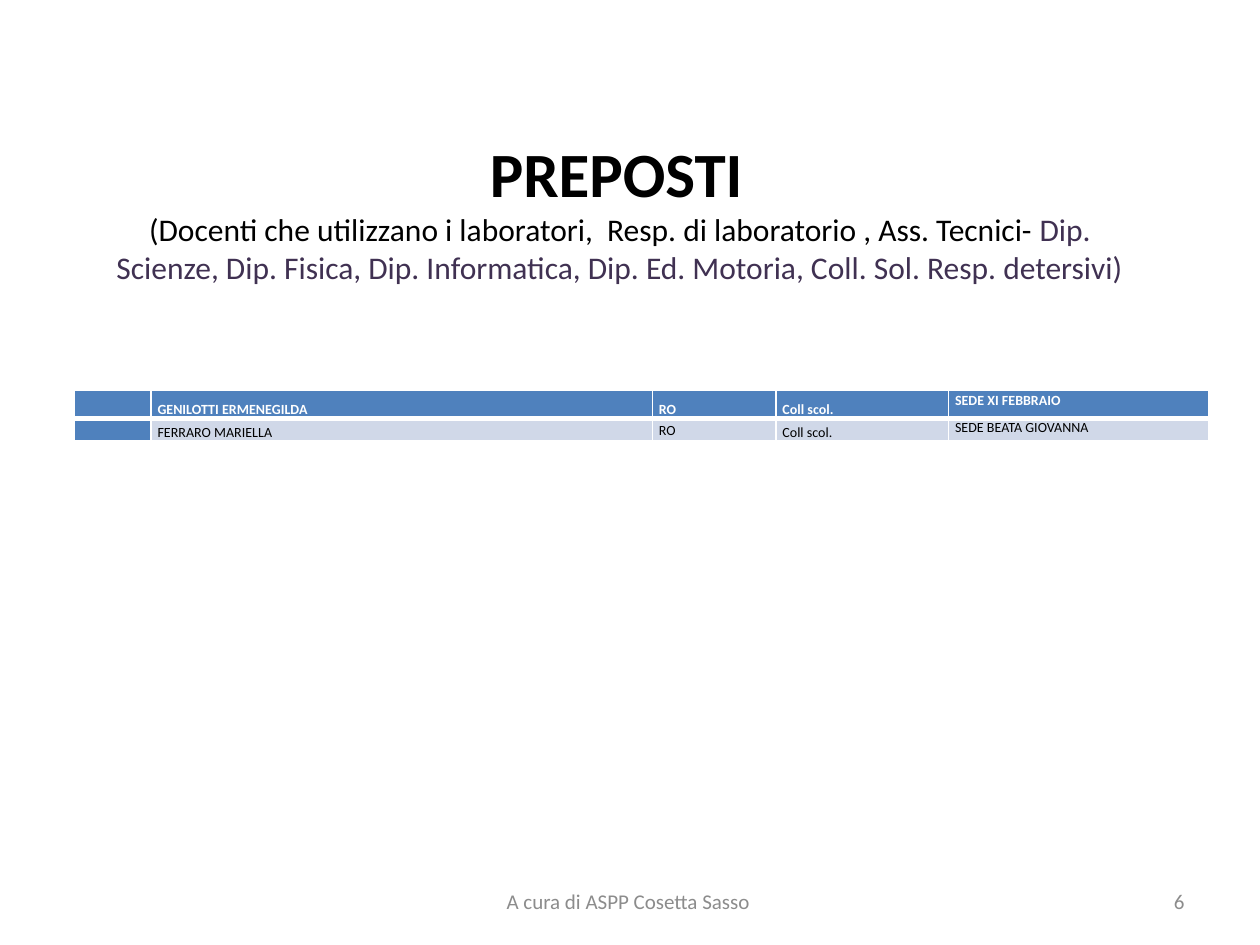
from dataclasses import dataclass

import lxml.etree
import pptx
import pptx.dml.color
import pptx.enum.text
import pptx.oxml.ns
import pptx.util

Inches = pptx.util.Inches
Pt = pptx.util.Pt
Align = pptx.enum.text.PP_ALIGN
Anchor = pptx.enum.text.MSO_ANCHOR
qn = pptx.oxml.ns.qn


@dataclass(frozen=True)
class Theme:
    font: str = "Calibri"
    ink: str = "000000"
    violet: str = "403152"
    grey: str = "8C8C8C"
    white: str = "FFFFFF"
    header: str = "4F81BD"
    band: str = "D0D8E8"
    title_size: int = 36
    subtitle_size: int = 18
    footer_size: int = 12
    table_size: int = 8


THEME = Theme()
COLUMNS = (0.61, 3.98, 0.98, 1.37, 2.06)
ROWS = (0.22, 0.18)
STAFF = (
    ("GENILOTTI ERMENEGILDA", "RO", "Coll scol.", "SEDE XI FEBBRAIO"),
    ("FERRARO MARIELLA", "RO", "Coll scol.", "SEDE BEATA GIOVANNA"),
)
ANCHORS = (
    (Anchor.BOTTOM, Anchor.BOTTOM, Anchor.BOTTOM, Anchor.TOP),
    (Anchor.BOTTOM, Anchor.MIDDLE, Anchor.BOTTOM, Anchor.TOP),
)


def apply_format(target, values):
    for name, value in values.items():
        setattr(target, name, value)


def add_span(para, text, size, color, bold=False):
    span = para.add_run()
    span.text = text
    apply_format(span.font, {"name": THEME.font, "size": Pt(size), "bold": bold})
    span.font.color.rgb = pptx.dml.color.RGBColor.from_string(color)


def add_text_box(page, bounds, align):
    box = page.shapes.add_textbox(*map(Inches, bounds))
    apply_format(box.text_frame, {"word_wrap": True, "vertical_anchor": Anchor.MIDDLE})
    para = box.text_frame.paragraphs[0]
    para.alignment = align
    return para


def add_title(page, bounds):
    para = add_text_box(page, bounds, Align.CENTER)
    size = THEME.subtitle_size
    add_span(para, "PREPOSTI", THEME.title_size, THEME.ink, True)
    add_span(para, " ", size, THEME.ink)
    para.add_line_break()
    add_span(para, "(Docenti che utilizzano i laboratori,  Resp. di laboratorio , Ass. Tecnici- ",
             size, THEME.ink)
    add_span(para, "Dip. Scienze, Dip. Fisica, Dip. Informatica, Dip. Ed. Motoria, "
             "Coll. Sol. Resp. detersivi)", size, THEME.violet)


def add_footer_text(page, bounds, text, align):
    para = add_text_box(page, bounds, align)
    add_span(para, text, THEME.footer_size, THEME.grey)


def add_solid_fill(parent, color):
    fill = lxml.etree.SubElement(parent, qn("a:solidFill"))
    lxml.etree.SubElement(fill, qn("a:srgbClr"), val=color)


def style_cell(cell, fill, widths):
    properties = cell._tc.get_or_add_tcPr()
    for side, width in widths.items():
        line = lxml.etree.SubElement(properties, qn(f"a:ln{side}"), w=str(Pt(width)))
        add_solid_fill(line, THEME.white)
    cell.fill.solid()
    cell.fill.fore_color.rgb = pptx.dml.color.RGBColor.from_string(fill)
    apply_format(cell, {"margin_left": Inches(0.05), "margin_right": Inches(0.05),
                        "margin_top": 0, "margin_bottom": 0})
    cell.text_frame.paragraphs[0].line_spacing = 1.07


def number_cell(cell):
    cell.vertical_anchor = Anchor.BOTTOM
    para = cell.text_frame.paragraphs[0]._p
    properties = para.get_or_add_pPr()
    properties.set("marL", str(Inches(0.31)))
    properties.set("indent", str(Inches(-0.25)))
    lxml.etree.SubElement(properties, qn("a:buFont"), typeface="+mj-lt")
    lxml.etree.SubElement(properties, qn("a:buAutoNum"), type="arabicPeriod")
    ending = lxml.etree.SubElement(para, qn("a:endParaRPr"),
                                   sz=str(THEME.table_size * 100), b="1")
    add_solid_fill(ending, THEME.white)
    lxml.etree.SubElement(ending, qn("a:latin"), typeface=THEME.font)


def add_staff_table(page, bounds):
    table = page.shapes.add_table(len(ROWS), len(COLUMNS), *map(Inches, bounds)).table
    for column, width in zip(table.columns, COLUMNS):
        column.width = Inches(width)
    for index, (row, height) in enumerate(zip(table.rows, ROWS)):
        row.height = Inches(height)
        is_header = index == 0
        widths = {"L": 1, "R": 1, "T": 1 if is_header else 3, "B": 3 if is_header else 1}
        fill = THEME.header if is_header else THEME.band
        color = THEME.white if is_header else THEME.ink
        number, *details = row.cells
        style_cell(number, THEME.header, widths)
        number_cell(number)
        for cell, text, anchor in zip(details, STAFF[index], ANCHORS[index]):
            style_cell(cell, fill, widths)
            cell.vertical_anchor = anchor
            add_span(cell.text_frame.paragraphs[0], text, THEME.table_size, color, is_header)


def main():
    deck = pptx.Presentation()
    apply_format(deck, {"slide_width": Inches(10), "slide_height": Inches(7.5)})
    page = deck.slides.add_slide(deck.slide_layouts[6])
    add_title(page, (0.67, 0.84, 8.5, 1.65))
    add_footer_text(page, (7.17, 6.95, 2.33, 0.4), "6", Align.RIGHT)
    add_footer_text(page, (3.42, 6.95, 3.17, 0.4), "A cura di ASPP Cosetta Sasso ", Align.CENTER)
    add_staff_table(page, (0.59, 3.1, sum(COLUMNS), sum(ROWS)))
    deck.save("out.pptx")


if __name__ == "__main__":
    main()
